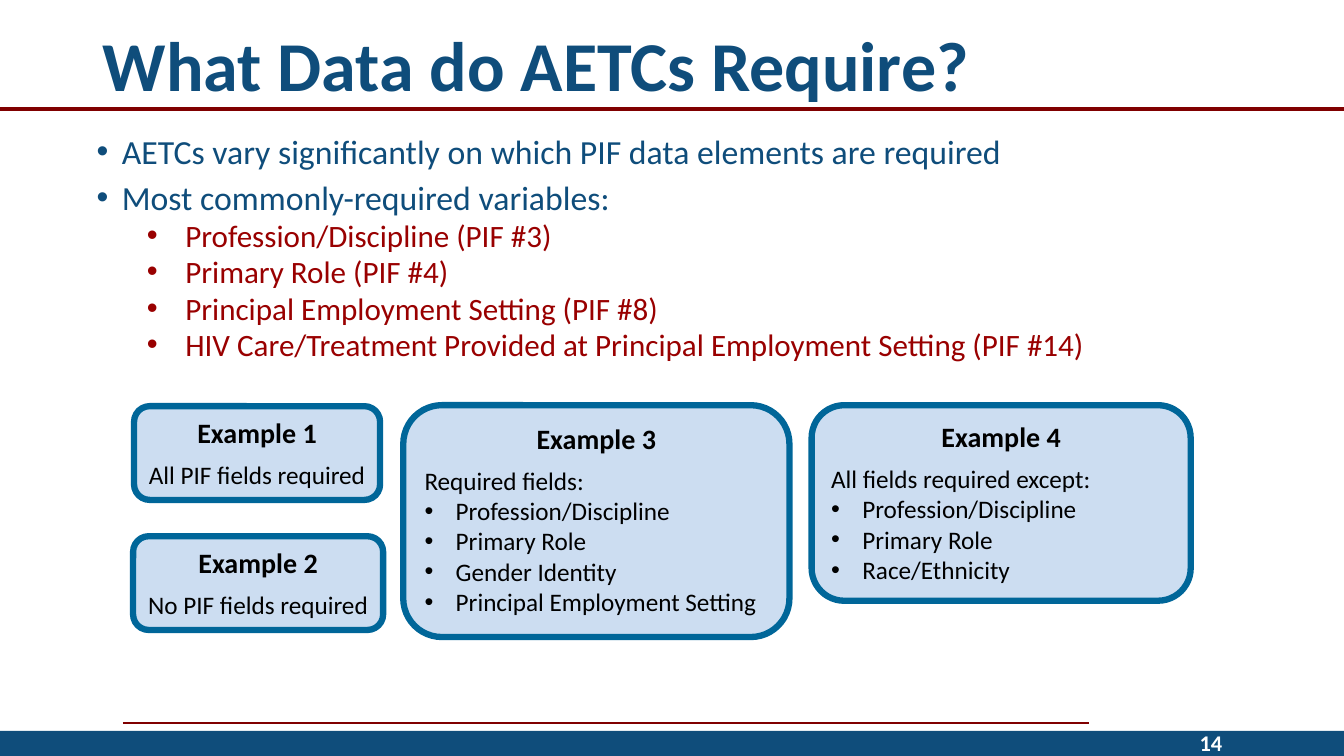
from lxml import etree
from pptx import Presentation
from pptx.dml.color import RGBColor
from pptx.enum.shapes import MSO_CONNECTOR, MSO_SHAPE
from pptx.enum.text import MSO_ANCHOR, PP_ALIGN
from pptx.oxml.ns import qn
from pptx.util import Inches, Pt

LEFT, CENTER, RIGHT = PP_ALIGN.LEFT, PP_ALIGN.CENTER, PP_ALIGN.RIGHT
TOP, MIDDLE = MSO_ANCHOR.TOP, MSO_ANCHOR.MIDDLE
RECT, ROUND = MSO_SHAPE.RECTANGLE, MSO_SHAPE.ROUNDED_RECTANGLE
STRAIGHT = MSO_CONNECTOR.STRAIGHT

# Content
FONT = "Calibri"
NAVY, MAROON, RED = "0F4D7B", "800000", "990000"
PALE, BLUE, BLACK, WHITE = "CCDDF1", "006699", "000000", "FFFFFF"
TITLE = "What Data do AETCs Require?"
PAGE = "14"
POINTS = [
    "AETCs vary significantly on which PIF data elements are required",
    "Most commonly-required variables:",
]
FIELDS = [
    "Profession/Discipline (PIF #3)",
    "Primary Role (PIF #4)",
    "Principal Employment Setting (PIF #8)",
    "HIV Care/Treatment Provided at Principal Employment Setting (PIF #14)",
]
# Place, heading, lead line, bullets
CARDS = [
    ((1.33, 4.03, 2.44, 0.93), "Example 1", "All PIF fields required", []),
    ((1.32, 5.32, 2.48, 0.93), "Example 2", "No PIF fields required", []),
    ((4, 4.02, 3.83, 2.3), "Example 3", "Required fields:",
     ["Profession/Discipline", "Primary Role", "Gender Identity",
      "Principal Employment Setting"]),
    ((8.05, 4.02, 3.76, 1.94), "Example 4", "All fields required except:",
     ["Profession/Discipline", "Primary Role", "Race/Ethnicity"]),
]
# Start, end, width
RULES = [
    ((1.22, 7.17), (10.8, 7.17), 1.5),
    ((0, 1.08), (13.33, 1.08), 3),
]

deck = Presentation()
deck.slide_width, deck.slide_height = Inches(13.33), Inches(7.5)
slide = deck.slides.add_slide(deck.slide_layouts[6])
shapes = slide.shapes


def color(code):
    return RGBColor.from_string(code)


def add_rule(start, end, width):
    line = shapes.add_connector(STRAIGHT, *map(Inches, start + end))
    line.line.color.rgb = color(MAROON)
    line.line.width = Pt(width)
    etree.SubElement(line._element.spPr, qn("a:effectLst"))


def add_shape(kind, place, fill, edge=None):
    shape = shapes.add_shape(kind, *map(Inches, place))
    shape.shadow.inherit = False
    shape.fill.solid()
    shape.fill.fore_color.rgb = color(fill)
    if edge:
        shape.line.color.rgb = color(edge)
        shape.line.width = Pt(4.5)
    else:
        shape.line.fill.background()
    return shape


def add_box(place, anchor=TOP):
    frame = shapes.add_textbox(*map(Inches, place)).text_frame
    frame.word_wrap = True
    frame.vertical_anchor = anchor
    return frame


def add_text(frame, text, size, ink, bold=False, align=LEFT,
             indent=None, gap=0, space=1):
    first = not frame.paragraphs[0].runs
    para = frame.paragraphs[0] if first else frame.add_paragraph()
    para.alignment = align
    para.line_spacing = space
    if not first:
        para.space_before = Pt(gap)
    if indent:
        left, hang = indent
        props = para._p.get_or_add_pPr()
        props.set("marL", str(Inches(left)))
        props.set("indent", str(-Inches(hang)))
        etree.SubElement(props, qn("a:buFont"), typeface="Arial")
        etree.SubElement(props, qn("a:buChar"), char="•")
    run = para.add_run()
    run.text = text
    font = run.font
    font.name, font.size, font.bold = FONT, Pt(size), bold
    font.color.rgb = color(ink)


# Rules and footer band
add_shape(RECT, (0, 7.25, 13.33, 0.25), NAVY)
for rule in RULES:
    add_rule(*rule)

# Title
add_text(add_box((0.92, 0.04, 11.5, 1.29), MIDDLE), TITLE, 50, NAVY,
         bold=True, space=0.9)

# Main points
body = add_box((0.86, 1.33, 10.53, 2.39))
for text in POINTS:
    add_text(body, text, 24.1, NAVY, indent=(0.25, 0.25), gap=9.5, space=0.8)
for text in FIELDS:
    add_text(body, text, 22.2, RED, indent=(0.88, 0.38), gap=4.7, space=0.8)

# Example cards
for place, head, lead, items in CARDS:
    frame = add_shape(ROUND, place, PALE, BLUE).text_frame
    frame.word_wrap = bool(items)
    frame.vertical_anchor = TOP
    add_text(frame, head, 20, BLACK, bold=True, align=CENTER)
    add_text(frame, lead, 18, BLACK, align=LEFT if items else CENTER, gap=7.3)
    for item in items:
        add_text(frame, item, 18, BLACK, indent=(0.31, 0.31))

# Page number
foot = add_box((9.22, 7.24, 3, 0.26), MIDDLE)
foot.margin_top = foot.margin_bottom = 0
add_text(foot, PAGE, 16, WHITE, bold=True, align=RIGHT)

deck.save("out.pptx")
